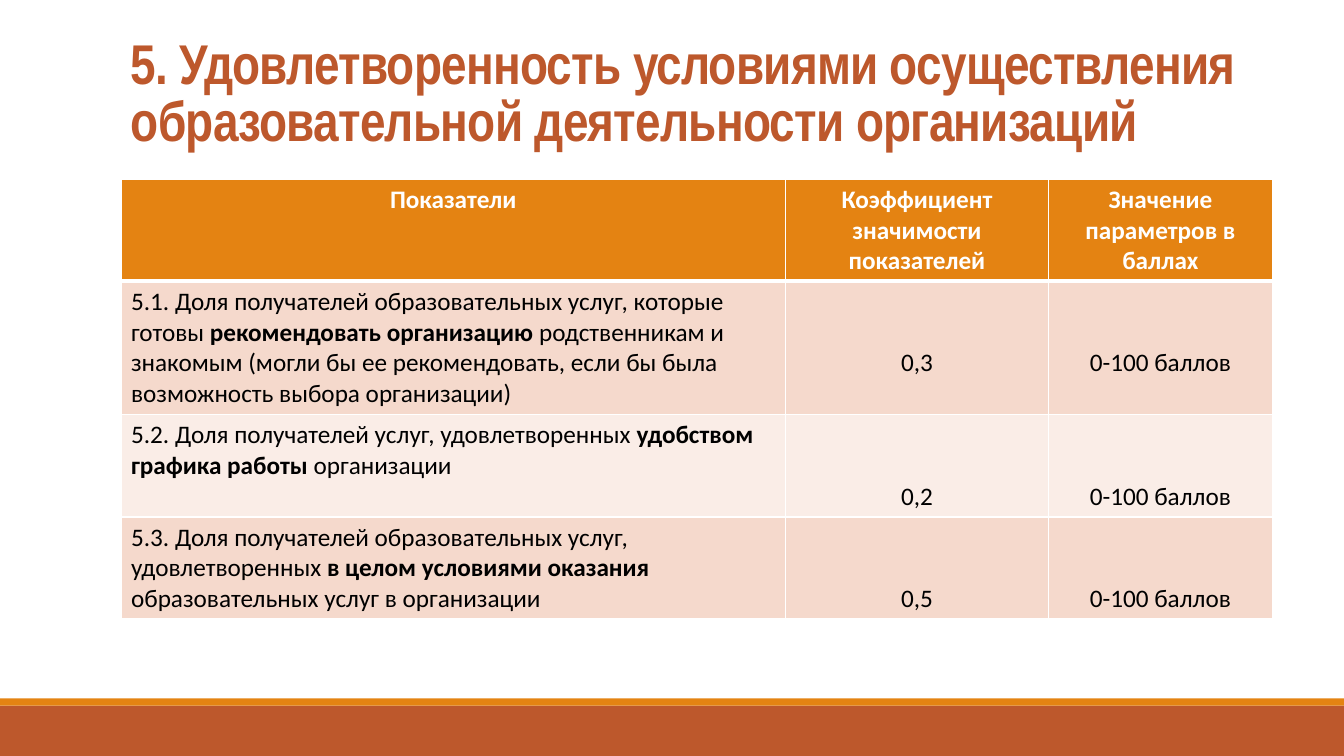
from lxml import etree
from pptx import Presentation
from pptx.dml.color import RGBColor
from pptx.enum.shapes import MSO_SHAPE
from pptx.enum.text import MSO_ANCHOR as Anchor, PP_ALIGN as Align
from pptx.oxml.ns import qn
from pptx.util import Inches, Pt

COLORS = {
    "rust": "BD582C", "orange": "E48312", "band_dark": "F5D9CC",
    "band_light": "FAEDE7", "white": "FFFFFF", "black": "000000",
}
TITLE = "5. Удовлетворенность условиями осуществления образовательной деятельности организаций"
HEADINGS = ["Показатели", "Коэффициент значимости показателей", "Значение параметров в баллах"]
# Indicator as (before, emphasis, after), weight, score range
INDICATORS = [
    (("5.1. Доля получателей образовательных услуг, которые готовы ",
      "рекомендовать организацию ",
      "родственникам и знакомым (могли бы ее рекомендовать, если бы была "
      "возможность выбора организации)"), "0,3", "0-100 баллов"),
    (("5.2. Доля получателей услуг, удовлетворенных ",
      "удобством графика работы ", "организации"), "0,2", "0-100 баллов"),
    (("5.3. Доля получателей образовательных услуг, удовлетворенных ",
      "в целом условиями оказания ",
      "образовательных услуг в организации"), "0,5", "0-100 баллов"),
]
FOOTER_BANDS = [(7, 0.5, "rust"), (6.93, 0.07, "orange")]
COLUMN_WIDTHS = [6.59, 2.61, 2.22]
ROW_HEIGHTS = [1.01, 1.32, 1.02, 1.01]
VALUE_LINE = 3  # text line of the row on which the values stand
LINE_HEIGHT = 0.305
CELL_MARGIN = 0.05
LEFT, WIDTH = 1.2, 11.43


def rgb(name):
    return RGBColor.from_string(COLORS[name])


def set_font(font, face, size, color, bold=None):
    font.name, font.size, font.bold = face, Pt(size), bold
    font.color.rgb = rgb(color)


def add_border(cell, side, points):
    line = etree.SubElement(cell._tc.get_or_add_tcPr(), qn(f"a:ln{side}"), w=str(Pt(points)))
    fill = etree.SubElement(line, qn("a:solidFill"))
    etree.SubElement(fill, qn("a:srgbClr"), val=COLORS["white"])


def style_cell(cell, row):
    for side in "LRTB":
        under_header = (row, side) in [(0, "B"), (1, "T")]
        add_border(cell, side, 3 if under_header else 1)
    cell.fill.solid()
    cell.fill.fore_color.rgb = rgb("orange" if row == 0 else
                                   "band_dark" if row % 2 else "band_light")


def write_centered(cell, text, color, bold):
    paragraph = cell.text_frame.paragraphs[0]
    paragraph.text = text
    paragraph.alignment = Align.CENTER
    set_font(paragraph.font, "Calibri", 18, color, bold)


def write_indicator(cell, parts):
    paragraph = cell.text_frame.paragraphs[0]
    set_font(paragraph.font, "Calibri", 18, "black")
    for part, bold in zip(parts, (False, True, False)):
        run = paragraph.add_run()
        run.text = part
        run.font.bold = bold


def add_footer(slide, slide_width):
    for top, height, color in FOOTER_BANDS:
        band = slide.shapes.add_shape(MSO_SHAPE.RECTANGLE, 0, Inches(top),
                                      slide_width, Inches(height))
        band.shadow.inherit = False
        band.fill.solid()
        band.fill.fore_color.rgb = rgb(color)
        band.line.fill.background()


def add_title(slide):
    box = slide.shapes.add_textbox(Inches(LEFT), Inches(0.31), Inches(WIDTH), Inches(1.26))
    frame = box.text_frame
    frame.word_wrap = True
    frame.vertical_anchor = Anchor.BOTTOM
    paragraph = frame.paragraphs[0]
    paragraph.line_spacing = 0.85
    run = paragraph.add_run()
    run.text = TITLE
    set_font(run.font, "Arial Narrow", 40, "rust", True)
    run._r.get_or_add_rPr().set("spc", "-50")


def add_indicator_table(slide):
    table = slide.shapes.add_table(
        len(INDICATORS) + 1, len(HEADINGS), Inches(LEFT), Inches(1.78),
        Inches(WIDTH), Inches(sum(ROW_HEIGHTS))).table
    for column, width in zip(table.columns, COLUMN_WIDTHS):
        column.width = Inches(width)
    for row, height in zip(table.rows, ROW_HEIGHTS):
        row.height = Inches(height)

    for column, heading in enumerate(HEADINGS):
        cell = table.cell(0, column)
        style_cell(cell, 0)
        write_centered(cell, heading, "white", True)

    for row, (parts, *values) in enumerate(INDICATORS, 1):
        indicator = table.cell(row, 0)
        style_cell(indicator, row)
        write_indicator(indicator, parts)
        lines = round((ROW_HEIGHTS[row] - 2 * CELL_MARGIN) / LINE_HEIGHT)
        for column, value in enumerate(values, 1):
            cell = table.cell(row, column)
            style_cell(cell, row)
            cell.vertical_anchor = Anchor.BOTTOM
            cell.margin_bottom = Inches(CELL_MARGIN + (lines - VALUE_LINE) * LINE_HEIGHT)
            write_centered(cell, value, "black", False)


def main():
    deck = Presentation()
    deck.slide_width, deck.slide_height = Inches(13.33), Inches(7.5)
    slide = deck.slides.add_slide(deck.slide_layouts[6])
    add_footer(slide, deck.slide_width)
    add_title(slide)
    add_indicator_table(slide)
    deck.save("out.pptx")


if __name__ == "__main__":
    main()
